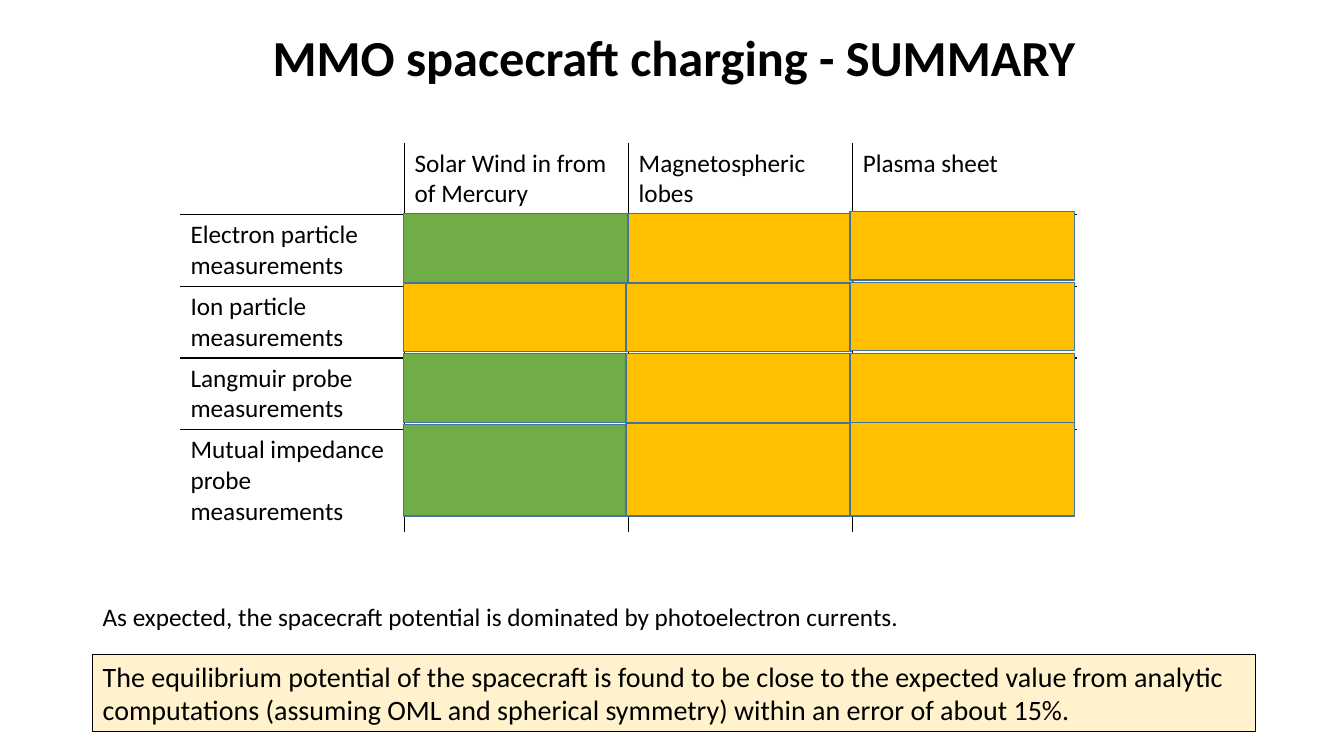
from pptx import Presentation
from pptx import util as u
from pptx.dml.color import RGBColor
from pptx.enum import shapes, text
from pptx.oxml import parse_xml
from pptx.oxml.ns import nsdecls

COLORS = {"ink": "000000", "good": "70AD47", "fair": "FFC000",
          "edge": "43739E", "note": "FFF2CC"}
FONT = "Calibri"


def write(tf, words, size, bold=False):
    tf.word_wrap = True
    p = tf.paragraphs[0]
    p.text = words
    p.alignment = text.PP_ALIGN.LEFT
    p.font.name, p.font.size, p.font.bold = FONT, u.Pt(size), bold
    p.font.color.rgb = RGBColor.from_string(COLORS["ink"])
    return p


def add_box(left, top, width, height, fill, line, weight):
    sp = s.shapes.add_shape(shapes.MSO_SHAPE.RECTANGLE, u.Inches(left), u.Inches(top),
                            u.Inches(width), u.Inches(height))
    sp.shadow.inherit = False
    sp.fill.solid()
    sp.fill.fore_color.rgb = RGBColor.from_string(COLORS[fill])
    sp.line.color.rgb = RGBColor.from_string(COLORS[line])
    sp.line.width = u.Pt(weight)
    return sp


prs = Presentation()
prs.slide_width, prs.slide_height = u.Inches(13.33), u.Inches(7.5)
s = prs.slides.add_slide(prs.slide_layouts[5])

# Title
title = s.shapes.title
title.left, title.top = u.Inches(0.04), 0
title.width, title.height = u.Inches(13.29), u.Inches(1.19)
title.text_frame.vertical_anchor = text.MSO_ANCHOR.MIDDLE
p = write(title.text_frame, "MMO spacecraft charging - SUMMARY", 36, True)
p.alignment, p.line_spacing = text.PP_ALIGN.CENTER, 0.9

# Table of instruments (rows) against plasma regions (columns)
regions = ["", "Solar Wind in from of Mercury", "Magnetospheric lobes", "Plasma sheet"]
instruments = ["Electron particle", "Ion particle", "Langmuir probe", "Mutual impedance probe"]
rows = [regions] + [[f"{name} measurements", "", "", ""] for name in instruments]
row_heights = [0.71] * 4 + [1.02]
last_row, last_col = len(rows) - 1, len(regions) - 1
frame = s.shapes.add_table(len(rows), len(regions), u.Inches(1.79), u.Inches(1.42),
                           u.Inches(8.89), u.Inches(sum(row_heights)))
table = frame.table
table.first_row = table.horz_banding = False
for r, row in enumerate(rows):
    table.rows[r].height = u.Inches(row_heights[r])
    for c, words in enumerate(row):
        cell = table.cell(r, c)
        cell.fill.background()
        write(cell.text_frame, words, 18)
        # Only the inner edges are ruled
        inner = {"lnL": c > 0, "lnR": c < last_col, "lnT": r > 0, "lnB": r < last_row}
        tcPr = cell._tc.get_or_add_tcPr()
        for i, (tag, ruled) in enumerate(inner.items()):
            paint = (f'<a:solidFill><a:srgbClr val="{COLORS["ink"]}"/></a:solidFill>'
                     if ruled else "<a:noFill/>")
            tcPr.insert(i, parse_xml(f'<a:{tag} {nsdecls("a")} w="12700">{paint}</a:{tag}>'))

# Ratings laid over the table body: left edge, row tops and ratings per region
ratings = [
    (4.00, [2.12, 2.81, 3.51, 4.21], ["good", "fair", "good", "good"]),
    (6.21, [2.12, 2.81, 3.51, 4.20], ["fair"] * 4),
    (8.43, [2.10, 2.80, 3.51, 4.19], ["fair"] * 4),
]
bottom = 5.12
for left, tops, levels in ratings:
    for i, (top, level) in enumerate(zip(tops, levels)):
        height = bottom - top if i == 3 else 0.68
        nudge = 0.02 if (left, i) == (6.21, 0) else 0
        add_box(left + nudge, top, 2.23, height, level, "edge", 1)

# Conclusions
note = add_box(0.92, 6.49, 11.53, 0.77, "note", "ink", 0.75)
note.text_frame.vertical_anchor = text.MSO_ANCHOR.TOP
write(note.text_frame, "The equilibrium potential of the spacecraft is found to be close to the "
      "expected value from analytic computations (assuming OML and spherical symmetry) "
      "within an error of about 15%.", 20)
remark = s.shapes.add_textbox(u.Inches(0.92), u.Inches(5.92), u.Inches(11.53), u.Inches(0.4))
write(remark.text_frame, "As expected, the spacecraft potential is dominated by "
      "photoelectron currents.", 18)

prs.save("out.pptx")
